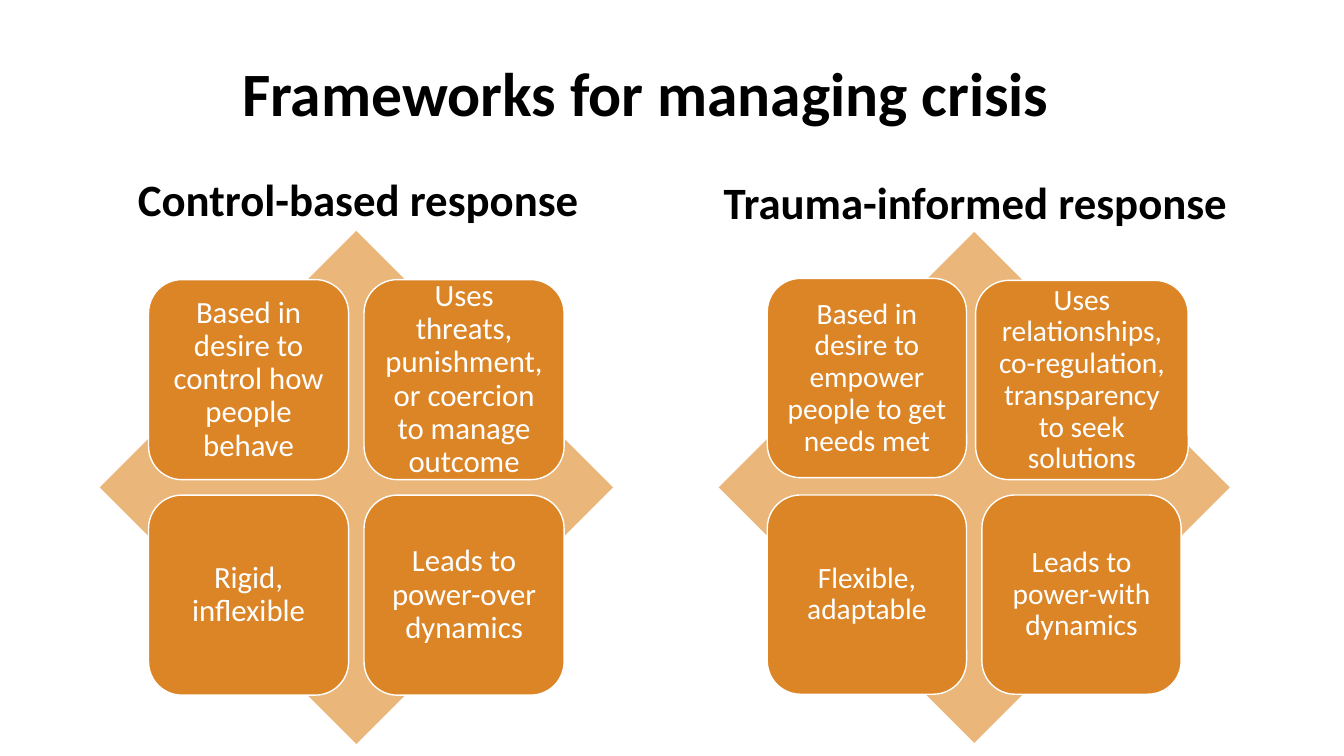
from dataclasses import dataclass

from pptx import Presentation
from pptx.dml.color import RGBColor
from pptx.enum.shapes import MSO_SHAPE as Shape
from pptx.enum.text import MSO_ANCHOR as Anchor, PP_ALIGN as Align
from pptx.shapes.autoshape import Shape as AutoShape
from pptx.slide import Slide
from pptx.util import Pt

FONT = "Calibri"
BLACK, WHITE = "000000", "FFFFFF"
ORANGE, PALE_ORANGE = "DB8527", "EAB679"

# Proportions of a matrix, relative to the side of its diamond
TILE, MARGIN, PITCH = 0.39, 0.095, 0.42


@dataclass
class Box:
    left: float
    top: float
    width: float
    height: float

    def lengths(self) -> tuple[Pt, Pt, Pt, Pt]:
        return Pt(self.left), Pt(self.top), Pt(self.width), Pt(self.height)


@dataclass
class Tile:
    """One quadrant; dx, dy and dw adjust its regular place and width."""
    text: str
    dx: float = 0
    dy: float = 0
    dw: float = 0


@dataclass
class Framework:
    heading: str
    heading_box: Box
    left: float
    top: float
    side: float
    font_size: int
    tiles: list[Tile]


FRAMEWORKS = [
    Framework(
        "Control-based response", Box(31.7, 100.1, 448.6, 64.8),
        71.3, 164.9, 366.5, 22,
        [
            Tile("Based in desire to control how people behave"),
            Tile("Uses threats, punishment, or coercion to manage outcome"),
            Tile("Rigid, inflexible"),
            Tile("Leads to power-over dynamics"),
        ],
    ),
    Framework(
        "Trauma-informed response", Box(465.8, 102.2, 462.2, 64.8),
        513.4, 165.6, 365, 21,
        [
            Tile("Based in desire to empower people to get needs met", dy=-1.4),
            Tile("Uses relationships, co-regulation, transparency to seek solutions",
                 dx=-4.5, dw=9.5),
            Tile("Flexible, adaptable"),
            Tile("Leads to power-with dynamics"),
        ],
    ),
]


def rgb(value: str) -> RGBColor:
    return RGBColor.from_string(value)


def write(sp: AutoShape, text: str, size: int, color: str,
          anchor: Anchor = Anchor.MIDDLE, bold: bool = False) -> None:
    tf = sp.text_frame
    tf.word_wrap = True
    tf.vertical_anchor = anchor
    p = tf.paragraphs[0]
    p.text = text
    p.alignment = Align.CENTER
    p.line_spacing = 0.9
    p.font.name = FONT
    p.font.size = Pt(size)
    p.font.bold = bold
    p.font.color.rgb = rgb(color)


def add_heading(s: Slide, box: Box, text: str, size: int, anchor: Anchor) -> None:
    write(s.shapes.add_textbox(*box.lengths()), text, size, BLACK, anchor, bold=True)


def add_filled(s: Slide, kind: Shape, box: Box, fill: str) -> AutoShape:
    sp = s.shapes.add_shape(kind, *box.lengths())
    sp.shadow.inherit = False
    sp.fill.solid()
    sp.fill.fore_color.rgb = rgb(fill)
    sp.line.fill.background()
    return sp


def add_tile(s: Slide, box: Box, text: str, size: int) -> None:
    sp = add_filled(s, Shape.ROUNDED_RECTANGLE, box, ORANGE)
    sp.line.color.rgb = rgb(WHITE)
    sp.line.width = Pt(1)
    tf = sp.text_frame
    tf.margin_left = tf.margin_right = tf.margin_top = tf.margin_bottom = Pt(6.5)
    write(sp, text, size, WHITE)


def add_framework(s: Slide, fw: Framework) -> None:
    add_heading(s, fw.heading_box, fw.heading, 32, Anchor.BOTTOM)
    add_filled(s, Shape.DIAMOND, Box(fw.left, fw.top, fw.side, fw.side), PALE_ORANGE)
    size = TILE * fw.side
    for i, tile in enumerate(fw.tiles):
        row, col = divmod(i, 2)
        left = fw.left + (MARGIN + col * PITCH) * fw.side + tile.dx
        top = fw.top + (MARGIN + row * PITCH) * fw.side + tile.dy
        add_tile(s, Box(left, top, size + tile.dw, size), tile.text, fw.font_size)


def main() -> None:
    prs = Presentation()
    prs.slide_width, prs.slide_height = Pt(960), Pt(540)
    s = prs.slides.add_slide(prs.slide_layouts[6])
    add_heading(s, Box(47.5, 16.6, 828, 104.4), "Frameworks for managing crisis",
                44, Anchor.MIDDLE)
    for fw in FRAMEWORKS:
        add_framework(s, fw)
    prs.save("out.pptx")


if __name__ == "__main__":
    main()
